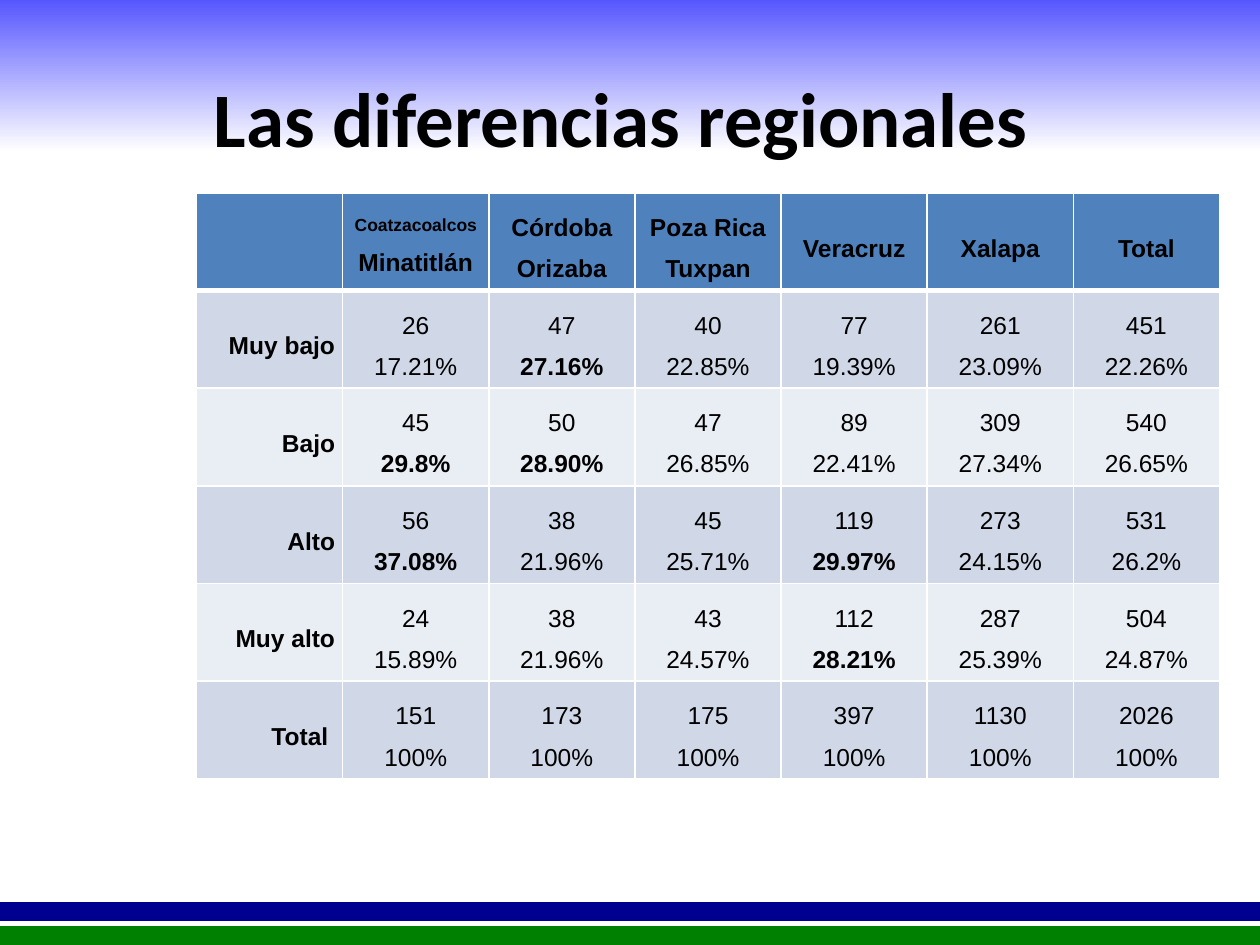
from lxml import etree
from pptx import Presentation
from pptx import util as u
from pptx.dml.color import RGBColor
from pptx.enum import shapes, text
from pptx.oxml import ns

COLORS = {
    "black": "000000", "white": "FFFFFF", "blue": "0000FF", "navy": "000090",
    "green": "008000", "header": "4F81BD", "odd": "D0D8E8", "even": "E9EDF4",
}

# Lines in a cell are split by "|"; a leading "*" marks a bold figure
HEADERS = ["", "Coatzacoalcos|Minatitlán", "Córdoba|Orizaba", "Poza Rica|Tuxpan",
           "Veracruz", "Xalapa", "Total"]
ROWS = [
    ["Muy bajo", "26|17.21%", "47|*27.16%", "40|22.85%", "77|19.39%", "261|23.09%", "451|22.26%"],
    ["Bajo", "45|*29.8%", "50|*28.90%", "47|26.85%", "89|22.41%", "309|27.34%", "540|26.65%"],
    ["Alto", "56|*37.08%", "38|21.96%", "45|25.71%", "119|*29.97%", "273|24.15%", "531|26.2%"],
    ["Muy alto", "24|15.89%", "38|21.96%", "43|24.57%", "112|*28.21%", "287|25.39%", "504|24.87%"],
    ["Total ", "151|100%", "173|100%", "175|100%", "397|100%", "1130|100%", "2026|100%"],
]


def rgb(name):
    return RGBColor.from_string(COLORS[name])


class SlideBuilder:
    title_font = "Calibri"
    body_font = "Arial"

    def __init__(self, prs):
        self.s = prs.slides.add_slide(prs.slide_layouts[5])

    def format_run(self, r, font, size, bold):
        r.font.name = font
        r.font.size = u.Pt(size)
        r.font.bold = bold
        r.font.color.rgb = rgb("black")

    def title(self, words, left, top, width, height):
        sp = self.s.shapes.title
        sp.left, sp.top = u.Inches(left), u.Inches(top)
        sp.width, sp.height = u.Inches(width), u.Inches(height)
        tf = sp.text_frame
        tf.text = words
        tf.vertical_anchor = text.MSO_ANCHOR.MIDDLE
        p = tf.paragraphs[0]
        p.alignment = text.PP_ALIGN.CENTER
        self.format_run(p.runs[0], self.title_font, 44, True)

    def band(self, top, height, color, fade_to=None):
        """Full-width strip behind the title, plain or fading downwards."""
        sp = self.s.shapes.add_shape(shapes.MSO_SHAPE.RECTANGLE, 0, u.Inches(top),
                                     u.Inches(10), u.Inches(height))
        sp.shadow.inherit = False
        sp.line.fill.background()
        if fade_to:
            sp.fill.gradient()
            sp.fill.gradient_angle = 270
            stops = zip(sp.fill.gradient_stops, (color, fade_to), (0, 0.77))
            for stop, name, position in stops:
                stop.color.rgb = rgb(name)
                stop.position = position
        else:
            sp.fill.solid()
            sp.fill.fore_color.rgb = rgb(color)
        self.s.shapes.title._element.addprevious(sp._element)

    def borders(self, cell, top, bottom):
        tc_pr = cell._tc.get_or_add_tcPr()
        widths = {"a:lnL": 1, "a:lnR": 1, "a:lnT": top, "a:lnB": bottom}
        for i, (tag, width) in enumerate(widths.items()):
            ln = etree.Element(ns.qn(tag), w=str(u.Pt(width)))
            fill = etree.SubElement(ln, ns.qn("a:solidFill"))
            etree.SubElement(fill, ns.qn("a:srgbClr"), val=COLORS["white"])
            tc_pr.insert(i, ln)

    def cell(self, cell, words, fill, align, bold):
        cell.fill.solid()
        cell.fill.fore_color.rgb = rgb(fill)
        cell.vertical_anchor = text.MSO_ANCHOR.MIDDLE
        cell.margin_left = cell.margin_right = u.Inches(0.06)
        cell.margin_top = cell.margin_bottom = u.Inches(0.06)
        lines = words.split("|")
        tf = cell.text_frame
        tf.text = "\n".join(line.lstrip("*") for line in lines)
        for p, line in zip(tf.paragraphs, lines):
            p.alignment = align
            p.line_spacing = 1.5
            size = 10 if line == "Coatzacoalcos" else 14
            for r in p.runs:
                self.format_run(r, self.body_font, size, bold or line.startswith("*"))

    def table(self, rows, left, top, col_width, row_height):
        n_rows, n_cols = len(rows), len(rows[0])
        table = self.s.shapes.add_table(
            n_rows, n_cols, u.Inches(left), u.Inches(top),
            u.Inches(col_width * n_cols), u.Inches(row_height * n_rows)).table
        table.horz_banding = False
        for i, row in enumerate(rows):
            fill = "header" if i == 0 else "odd" if i % 2 else "even"
            for j, words in enumerate(row):
                is_label = i > 0 and j == 0
                align = text.PP_ALIGN.RIGHT if is_label else text.PP_ALIGN.CENTER
                cell = table.cell(i, j)
                self.cell(cell, words, fill, align, i == 0 or is_label)
                self.borders(cell, 3 if i == 1 else 1, 3 if i == 0 else 1)


def main():
    prs = Presentation()
    prs.slide_width, prs.slide_height = u.Inches(10), u.Inches(7.5)
    slide = SlideBuilder(prs)

    # Background bands
    slide.band(7.16, 0.15, "navy")
    slide.band(7.35, 0.15, "green")
    slide.band(-0.62, 2.37, "blue", fade_to="white")

    # Title and regional table
    slide.title("Las diferencias regionales ", 0.5, 0.3, 9, 1.25)
    slide.table([HEADERS] + ROWS, 1.56, 1.53, 1.16, 0.76)

    prs.save("out.pptx")


if __name__ == "__main__":
    main()
